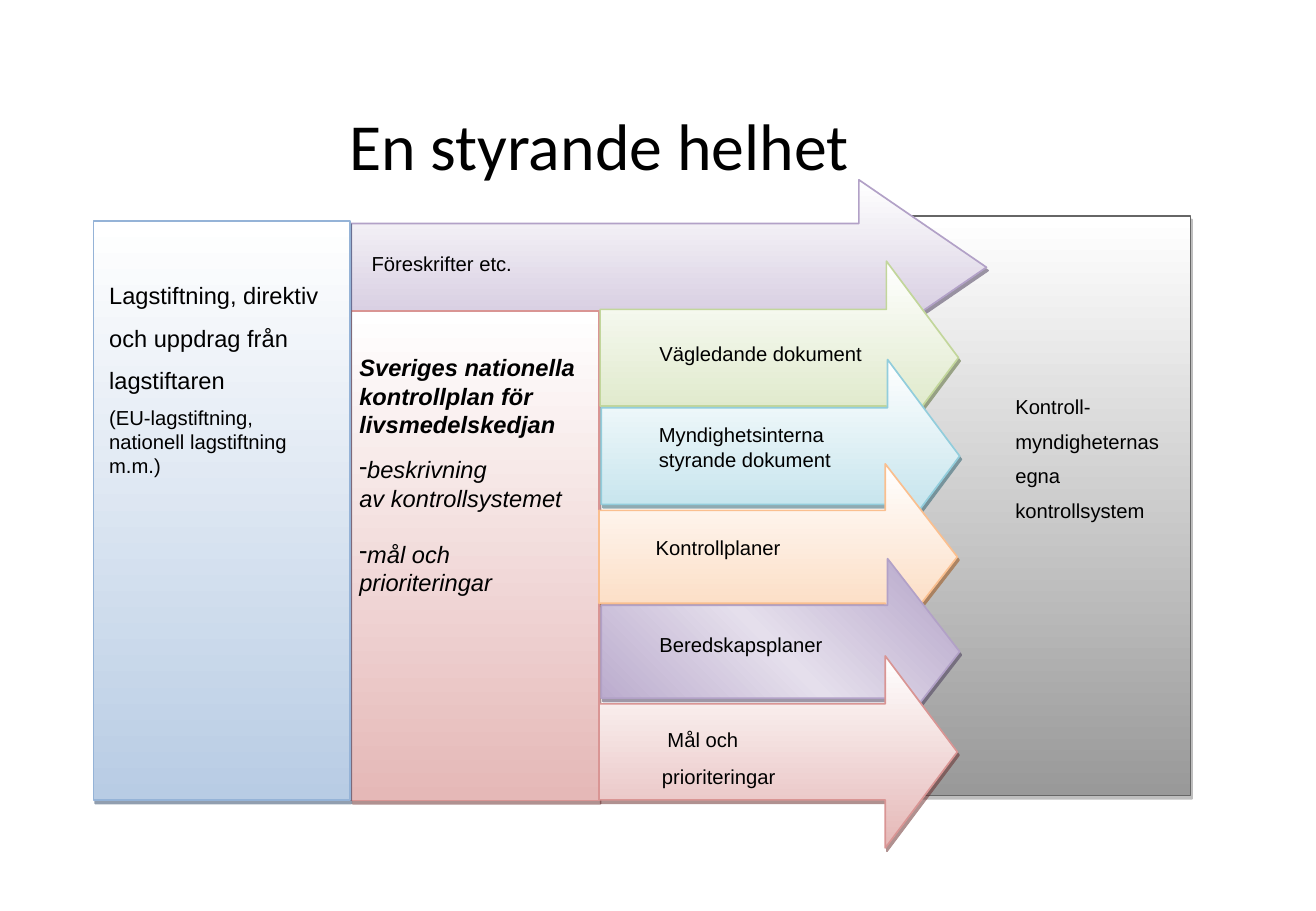
from copy import deepcopy
from dataclasses import dataclass

from lxml.etree import SubElement
from pptx import Presentation
from pptx.dml.color import RGBColor
from pptx.enum.shapes import MSO_SHAPE
from pptx.enum.text import MSO_ANCHOR, MSO_AUTO_SIZE, PP_ALIGN
from pptx.oxml.ns import qn
from pptx.util import Pt


@dataclass(frozen=True)
class Theme:
    title_font: str = "Calibri"
    body_font: str = "Arial"
    title_size: float = 39
    large: float = 14
    small: float = 12
    text: str = "000000"
    white: str = "FFFFFF"


@dataclass(frozen=True)
class Palette:
    stops: tuple
    line: str
    shadow: str
    angle: float = 270


@dataclass(frozen=True)
class Entry:
    text: str
    size: float
    after: float = 10
    spacing: float = 1.0
    bold: bool = False
    italic: bool = False
    bullet: str = ""


THEME = Theme()
GRAY = Palette((THEME.white, "999999"), "666666", "7F7F7F")
LILAC = Palette((THEME.white, "CCC0D9"), "B2A1C7", "3F3151")
RED = Palette((THEME.white, "E5B8B7"), "D99594", "622423")
BLUE = Palette((THEME.white, "B8CCE4"), "95B3D7", "243F60")
GREEN = Palette((THEME.white, "D6E3BC"), "C2D69B", "4E6128")
AQUA = Palette((THEME.white, "B6DDE8"), "92CDDC", "205867")
ORANGE = Palette((THEME.white, "FBD4B4"), "FABF8F", "974706")
PURPLE = Palette(("B2A1C7", "E5DFEC", "B2A1C7"), "B2A1C7", "3F3151", 45)

LABEL_INDENT = 36
ARROW_WIDTH = 212.4
ARROW_HEAD = 42.7

ARROWS = [
    ((355.7, 154.8, 114.5), GREEN, (347.8, 198.7, 239.8, 35.3), "Vägledande dokument", 1.0),
    ((356.4, 213.1, 114.5), AQUA, (347.4, 247, 209.5, 52.6), "Myndighetsinterna\vstyrande dokument", 1.0),
    ((355, 275, 110.2), ORANGE, (345.6, 313.9, 160.6, 33.1), "Kontrollplaner", 1.0),
    ((356.4, 331.2, 110.2), PURPLE, (347.8, 371.5, 185, 33.1), "Beredskapsplaner", 1.0),
    ((355, 388.8, 113.8), RED, (349.2, 420.5, 159.1, 43.9), " Mål och prioriteringar", 1.5),
]


def style_font(font, name, size):
    font.name = name
    font.size = Pt(size)
    font.color.rgb = RGBColor.from_string(THEME.text)


def add_title(slide, text, box):
    title = slide.shapes.title
    title.left, title.top, title.width, title.height = map(Pt, box)
    frame = title.text_frame
    frame.text = text
    frame.auto_size = MSO_AUTO_SIZE.NONE
    frame.vertical_anchor = MSO_ANCHOR.TOP
    frame.margin_left = frame.margin_top = frame.margin_right = frame.margin_bottom = 0
    paragraph = frame.paragraphs[0]
    paragraph.alignment = PP_ALIGN.CENTER
    style_font(paragraph.font, THEME.title_font, THEME.title_size)


def fill_gradient(shape, palette):
    shape.fill.gradient()
    shape.fill.gradient_angle = palette.angle
    stop_list = shape._element.spPr.find(".//" + qn("a:gsLst"))
    while len(stop_list) < len(palette.stops):
        stop_list.append(deepcopy(stop_list[-1]))
    for index, (stop, color) in enumerate(zip(shape.fill.gradient_stops, palette.stops)):
        stop.position = index / (len(palette.stops) - 1)
        stop.color.rgb = RGBColor.from_string(color)


def add_shadow(shape, color):
    shape.shadow.inherit = False
    effects = shape._element.spPr.find(qn("a:effectLst"))
    shadow = SubElement(effects, qn("a:outerShdw"), dist=str(Pt(2.2)), dir="3780000",
                        algn="ctr", rotWithShape="0")
    shadow_color = SubElement(shadow, qn("a:srgbClr"), val=color)
    SubElement(shadow_color, qn("a:alpha"), val="50000")


def add_panel(slide, box, palette, kind=MSO_SHAPE.RECTANGLE):
    shape = slide.shapes.add_shape(kind, *map(Pt, box))
    fill_gradient(shape, palette)
    shape.line.color.rgb = RGBColor.from_string(palette.line)
    shape.line.width = Pt(1)
    add_shadow(shape, palette.shadow)
    return shape


def add_arrow(slide, box, palette, head):
    arrow = add_panel(slide, box, palette, MSO_SHAPE.RIGHT_ARROW)
    arrow.adjustments[0] = 0.5
    arrow.adjustments[1] = head / box[3]


def add_text(slide, box, entries, indent=0):
    frame = slide.shapes.add_textbox(*map(Pt, box)).text_frame
    frame.word_wrap = True
    for index, entry in enumerate(entries):
        paragraph = frame.add_paragraph() if index else frame.paragraphs[0]
        paragraph.text = entry.text
        paragraph.space_after = Pt(entry.after)
        paragraph.line_spacing = entry.spacing
        style_font(paragraph.font, THEME.body_font, entry.size)
        paragraph.font.bold = entry.bold
        paragraph.font.italic = entry.italic
        properties = paragraph._p.get_or_add_pPr()
        properties.set("marL", str(Pt(indent)))
        properties.set("indent", "0")
        if entry.bullet:
            bullet = SubElement(properties, qn("a:buChar"), char=entry.bullet)
            properties.find(qn("a:defRPr")).addprevious(bullet)


def main():
    presentation = Presentation()
    presentation.slide_width, presentation.slide_height = Pt(780), Pt(540)
    slide = presentation.slides.add_slide(presentation.slide_layouts[5])
    add_title(slide, "En styrande helhet", (28.8, 61.9, 652.3, 90.7))

    add_panel(slide, (535, 128.2, 170.6, 343.4), GRAY)
    owners = ["Kontroll-", "myndigheternas", "egna", "kontrollsystem"]
    add_text(slide, (558.7, 230.4, 160.6, 109.4),
             [Entry(text, THEME.small, after=6) for text in owners], LABEL_INDENT)

    add_arrow(slide, (208.1, 106.6, 376.6, 103.7), LILAC, 75.6)
    add_text(slide, (213.1, 145.4, 265, 36.7), [Entry("Föreskrifter etc.", THEME.small)])

    add_panel(slide, (208.1, 184.3, 146.9, 290.2), RED)
    add_panel(slide, (55.4, 131, 151.9, 343.4), BLUE)
    add_text(slide, (57.6, 154.8, 140.4, 144.7), [
        Entry("Lagstiftning, direktiv och uppdrag från lagstiftaren", THEME.large, 6, 1.5),
        Entry("(EU-lagstiftning, nationell lagstiftning m.m.)", THEME.small),
    ])
    add_text(slide, (205.9, 205.9, 149.8, 202.3), [
        Entry("Sveriges nationella kontrollplan för livsmedelskedjan", THEME.large,
              bold=True, italic=True),
        Entry("beskrivning\vav kontrollsystemet", THEME.large, 16.5, italic=True, bullet="-"),
        Entry("mål och prioriteringar", THEME.large, 0, italic=True, bullet="-"),
    ])

    for (left, top, height), palette, label_box, label, spacing in ARROWS:
        add_arrow(slide, (left, top, ARROW_WIDTH, height), palette, ARROW_HEAD)
        add_text(slide, label_box, [Entry(label, THEME.small, spacing=spacing)], LABEL_INDENT)

    presentation.save("out.pptx")


if __name__ == "__main__":
    main()
